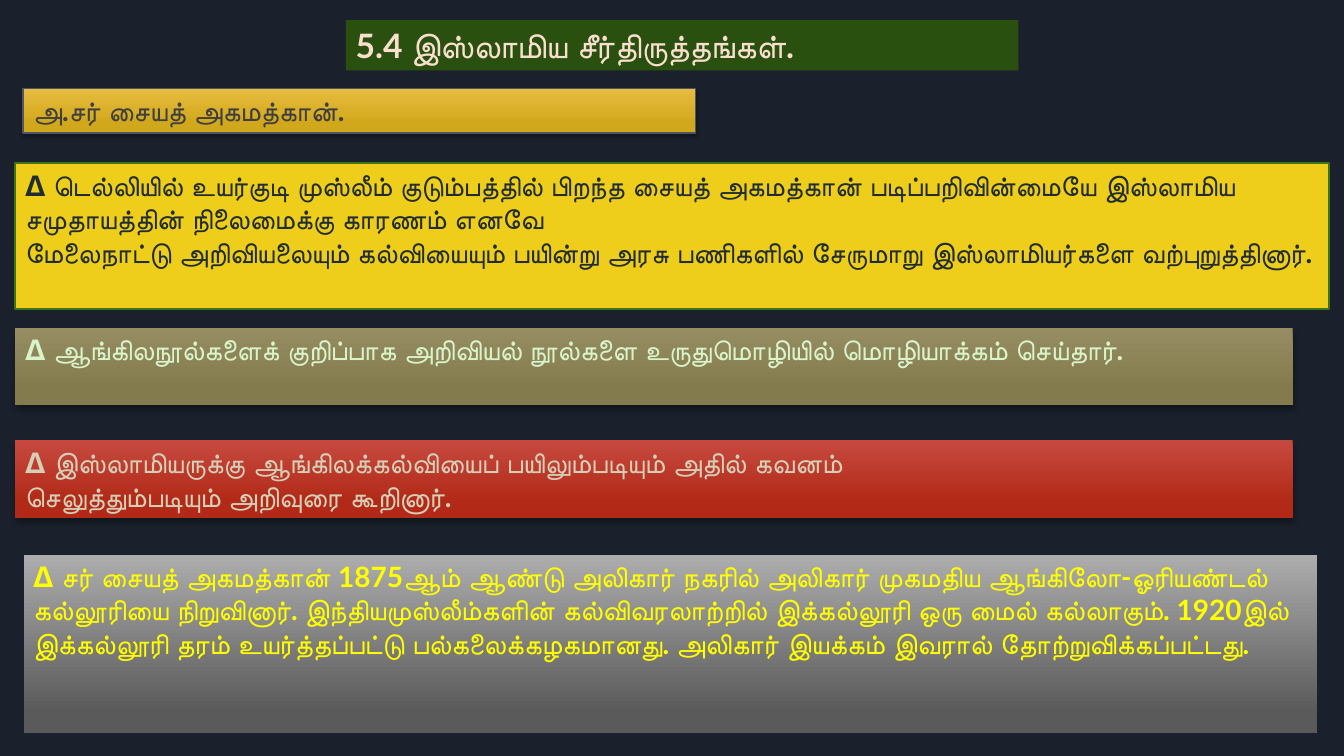
"""Build the slide on the Islamic reforms of Syed Ahmed Khan."""
import dataclasses

import lxml.etree
import pptx
import pptx.dml.color
import pptx.enum.shapes
import pptx.enum.text
import pptx.oxml.ns
import pptx.util

Inches = pptx.util.Inches


@dataclasses.dataclass(frozen=True)
class Theme:
    """Hold the colours and type sizes."""

    font: str = "Lato"
    title_size: int = 24
    body_size: int = 20
    background: str = "1B212C"
    green: str = "2A5010"
    peach: str = "FADFCF"
    gold: tuple = ("E7BC40", "D1A81B")
    slate: str = "4E5567"
    charcoal: str = "3F3F3F"
    yellow: str = "EECE1A"
    leaf: str = "3D7418"
    ink: str = "212D32"
    olive: tuple = ("978D63", "837A4D")
    mint: str = "D9F4C9"
    red: tuple = ("C6493F", "B22A17")
    sand: str = "D5CFB8"
    grey: tuple = ("ADADAD", "5A5A5A")
    bright: str = "FFFF00"
    shadow: str = "000000"


def rgb(value):
    """Turn a hex string into a colour."""
    return pptx.dml.color.RGBColor.from_string(value)


def write_text(frame, paragraphs, *, font, size, color, bold=True):
    """Write left-aligned paragraphs into a text frame."""
    frame.word_wrap = True
    frame.vertical_anchor = pptx.enum.text.MSO_ANCHOR.TOP
    frame.auto_size = pptx.enum.text.MSO_AUTO_SIZE.SHAPE_TO_FIT_TEXT
    for index, text in enumerate(paragraphs):
        paragraph = frame.add_paragraph() if index else frame.paragraphs[0]
        paragraph.alignment = pptx.enum.text.PP_ALIGN.LEFT
        run = paragraph.add_run()
        run.text = text
        run.font.name = font
        run.font.size = pptx.util.Pt(size)
        run.font.bold = bold
        run.font.color.rgb = rgb(color)


class SlideBuilder:
    """Draw styled elements on the current slide."""

    def __init__(self, slide, theme):
        """Keep the slide and theme, and paint the background."""
        self.slide = slide
        self.theme = theme
        slide.background.fill.solid()
        slide.background.fill.fore_color.rgb = rgb(theme.background)

    def banner(self, box, paragraphs, fill, color, *, size=None, fade_end=0.78,
               line=None, line_width=1, shadow=None):
        """Add a text rectangle with a solid fill or a vertical fade."""
        shape = self.slide.shapes.add_shape(
            pptx.enum.shapes.MSO_SHAPE.RECTANGLE, *map(Inches, box))
        if isinstance(fill, tuple):
            self.fade(shape, fill, fade_end)
        else:
            shape.fill.solid()
            shape.fill.fore_color.rgb = rgb(fill)
        if line:
            shape.line.color.rgb = rgb(line)
            shape.line.width = pptx.util.Pt(line_width)
        else:
            shape.line.fill.background()
        shape.shadow.inherit = False
        if shadow:
            self.drop_shadow(shape, *shadow)
        write_text(shape.text_frame, paragraphs, font=self.theme.font,
                   size=size or self.theme.body_size, color=color)

    def fade(self, shape, colors, end):
        """Fill a shape from top to bottom, reaching the last colour at end."""
        shape.fill.gradient()
        shape.fill.gradient_angle = 270
        for stop, color, position in zip(shape.fill.gradient_stops, colors, (0, end)):
            stop.color.rgb = rgb(color)
            stop.position = position

    def drop_shadow(self, shape, blur, distance):
        """Add a soft shadow below a shape, in points."""
        qn = pptx.oxml.ns.qn
        effects = shape._element.spPr.find(qn("a:effectLst"))
        outer = lxml.etree.SubElement(
            effects, qn("a:outerShdw"), blurRad=str(pptx.util.Pt(blur)),
            dist=str(pptx.util.Pt(distance)), dir="5400000", rotWithShape="0")
        color = lxml.etree.SubElement(outer, qn("a:srgbClr"), val=self.theme.shadow)
        lxml.etree.SubElement(color, qn("a:alpha"), val="35000")


def main():
    """Create the presentation and save it."""
    theme = Theme()
    presentation = pptx.Presentation()
    presentation.slide_width = Inches(13.33)
    presentation.slide_height = Inches(7.5)
    slide = presentation.slides.add_slide(presentation.slide_layouts[6])
    builder = SlideBuilder(slide, theme)

    builder.banner((3.43, 0.2, 6.67, 0.5), ["5.4 இஸ்லாமிய சீர்திருத்தங்கள்."],
                   theme.green, theme.peach, size=theme.title_size)
    builder.banner((0.23, 0.88, 6.67, 0.44), ["அ.சர் சையத் அகமத்கான்."],
                   theme.gold, theme.charcoal, line=theme.slate, shadow=(3, 2))
    builder.banner(
        (0.15, 1.62, 13.03, 1.45),
        ["∆ டெல்லியில் உயர்குடி முஸ்லீம் குடும்பத்தில் பிறந்த சையத் அகமத்கான் "
         "படிப்பறிவின்மையே இஸ்லாமிய சமுதாயத்தின் நிலைமைக்கு காரணம் எனவே",
         "மேலைநாட்டு அறிவியலையும் கல்வியையும் பயின்று அரசு பணிகளில் சேருமாறு "
         "இஸ்லாமியர்களை வற்புறுத்தினார்."],
        theme.yellow, theme.ink, line=theme.leaf, line_width=1.5)
    builder.banner(
        (0.15, 3.25, 12.67, 0.77),
        ["∆ ஆங்கிலநூல்களைக் குறிப்பாக அறிவியல் நூல்களை உருதுமொழியில் "
         "மொழியாக்கம் செய்தார்."],
        theme.olive, theme.mint, shadow=(4, 3))
    builder.banner(
        (0.15, 4.37, 12.67, 0.77),
        ["∆ இஸ்லாமியருக்கு ஆங்கிலக்கல்வியைப் பயிலும்படியும் அதில் கவனம்",
         "செலுத்தும்படியும் அறிவுரை கூறினார்."],
        theme.red, theme.sand, shadow=(4, 3))
    builder.banner(
        (0.23, 5.5, 12.84, 1.78),
        ["∆ சர் சையத் அகமத்கான் 1875ஆம் ஆண்டு அலிகார் நகரில் அலிகார் முகமதிய "
         "ஆங்கிலோ-ஓரியண்டல் கல்லூரியை நிறுவினார். இந்தியமுஸ்லீம்களின் "
         "கல்விவரலாற்றில் இக்கல்லூரி ஒரு மைல் கல்லாகும். 1920இல் இக்கல்லூரி "
         "தரம் உயர்த்தப்பட்டு பல்கலைக்கழகமானது. அலிகார் இயக்கம் இவரால் "
         "தோற்றுவிக்கப்பட்டது."],
        theme.grey, theme.bright, fade_end=0.88, line=theme.background)

    presentation.save("out.pptx")


if __name__ == "__main__":
    main()
